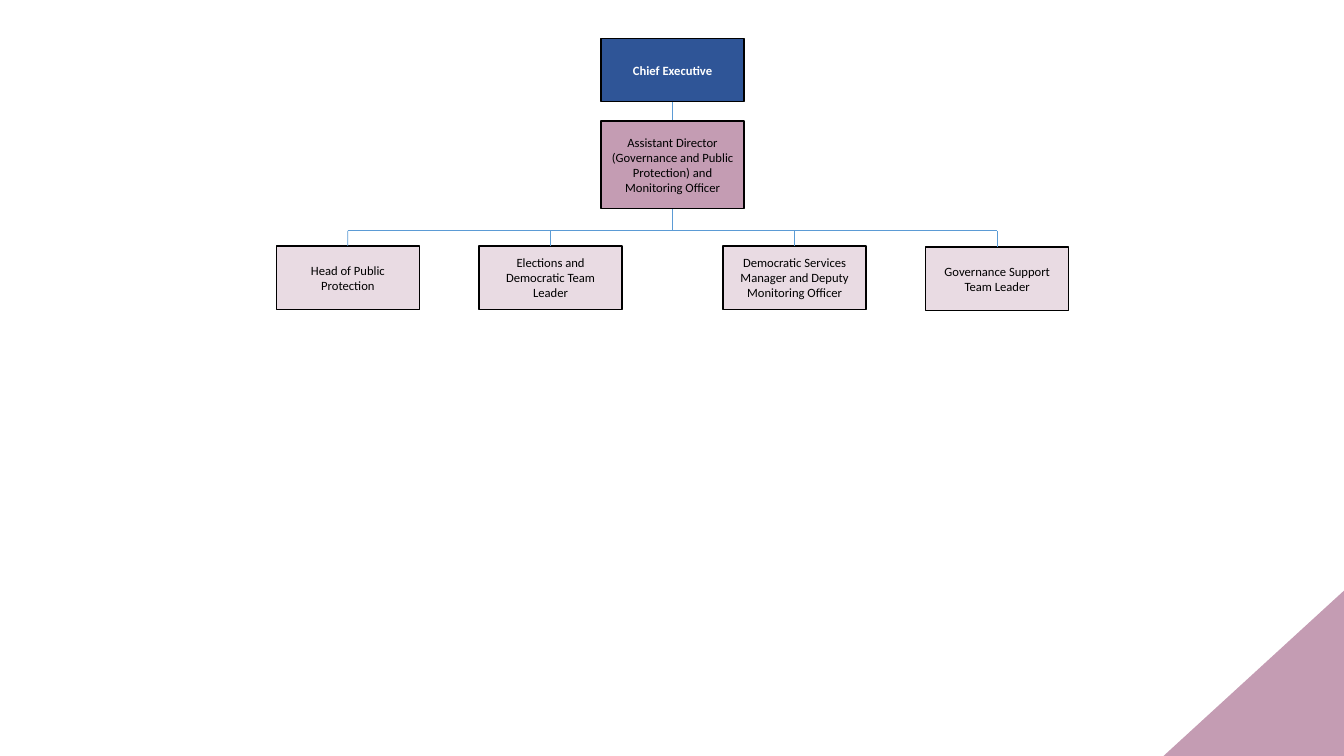
from dataclasses import dataclass

from lxml import etree
from pptx import Presentation
from pptx.dml.color import RGBColor
from pptx.enum.shapes import MSO_CONNECTOR as CONN, MSO_SHAPE as SHAPE
from pptx.enum.text import MSO_ANCHOR as ANCHOR, PP_ALIGN as ALIGN
from pptx.oxml.ns import qn
from pptx.util import Inches, Pt


@dataclass(frozen=True)
class Theme:
    font: str = "Calibri"
    size: float = 9
    navy: str = "2F5597"
    mauve: str = "C49CB3"
    pale: str = "E9DBE3"
    black: str = "000000"
    white: str = "FFFFFF"
    link: str = "5B9BD5"
    border: float = 1
    link_width: float = 0.5


THEME = Theme()
SLIDE_W, SLIDE_H = 13.33, 7.5

# Chart grid: a centre column, box sizes and row positions
CENTRE = SLIDE_W / 2 + 0.005
BOX_W, BOX_H, DIRECTOR_H = 1.42, 0.63, 0.87
CHIEF_Y, DIRECTOR_Y, BUS_Y, TEAM_Y = 0.38, 1.2, 2.29, 2.44
INNER, OUTER = 1.21, 3.22
TOP, BOTTOM = 0, 2

TEAM = [
    (-OUTER, TEAM_Y, "Head of Public Protection"),
    (-INNER, TEAM_Y, "Elections and Democratic Team Leader"),
    (INNER, TEAM_Y, "Democratic Services Manager and Deputy Monitoring Officer"),
    (OUTER, TEAM_Y + 0.01, "Governance Support Team Leader"),
]


def rgb(value):
    return RGBColor.from_string(value)


def add_filled(slide, kind, left, top, width, height, fill):
    s = slide.shapes.add_shape(kind, *map(Inches, (left, top, width, height)))
    s.shadow.inherit = False
    s.fill.solid()
    s.fill.fore_color.rgb = rgb(fill)
    return s


def add_post(slide, centre, top, height, text, fill, color=THEME.black, bold=False):
    """Add a bordered box for one post, centred on a column."""
    s = add_filled(slide, SHAPE.RECTANGLE, centre - BOX_W / 2, top, BOX_W, height, fill)
    s.line.color.rgb = rgb(THEME.black)
    s.line.width = Pt(THEME.border)
    tf = s.text_frame
    tf.word_wrap = True
    tf.vertical_anchor = ANCHOR.MIDDLE
    p = tf.paragraphs[0]
    p.alignment = ALIGN.CENTER
    r = p.add_run()
    r.text = text
    formats = {"name": THEME.font, "size": Pt(THEME.size), "bold": bold}
    for name, value in formats.items():
        setattr(r.font, name, value)
    r.font.color.rgb = rgb(color)
    return s


def add_link(slide, x1, y1, x2, y2):
    c = slide.shapes.add_connector(CONN.STRAIGHT, *map(Inches, (x1, y1, x2, y2)))
    c.line.color.rgb = rgb(THEME.link)
    c.line.width = Pt(THEME.link_width)
    etree.SubElement(c._element.spPr, qn("a:effectLst"))
    return c


def add_corner(slide, width, height):
    s = add_filled(slide, SHAPE.RIGHT_TRIANGLE, SLIDE_W - width, SLIDE_H - height,
                   width, height, THEME.mauve)
    s.line.fill.background()
    s._element.spPr.find(qn("a:xfrm")).set("flipH", "1")


def main():
    prs = Presentation()
    prs.slide_width, prs.slide_height = Inches(SLIDE_W), Inches(SLIDE_H)
    slide = prs.slides.add_slide(prs.slide_layouts[6])

    # Corner decoration
    add_corner(slide, 1.79, 1.64)

    # Chief Executive, with the trunk running behind the director's box
    chief = add_post(slide, CENTRE, CHIEF_Y, BOX_H, "Chief Executive",
                     THEME.navy, THEME.white, True)
    trunk = add_link(slide, CENTRE, CHIEF_Y + BOX_H, CENTRE, BUS_Y)
    trunk.begin_connect(chief, BOTTOM)
    add_post(slide, CENTRE, DIRECTOR_Y, DIRECTOR_H,
             "Assistant Director (Governance and Public Protection) and Monitoring Officer",
             THEME.mauve)

    # Team row, each box hanging from the shared horizontal line
    add_link(slide, CENTRE - OUTER, BUS_Y, CENTRE + OUTER, BUS_Y)
    for offset, top, text in TEAM:
        x = CENTRE + offset
        post = add_post(slide, x, top, BOX_H, text, THEME.pale)
        add_link(slide, x, BUS_Y, x, top).end_connect(post, TOP)

    prs.save("out.pptx")


if __name__ == "__main__":
    main()
